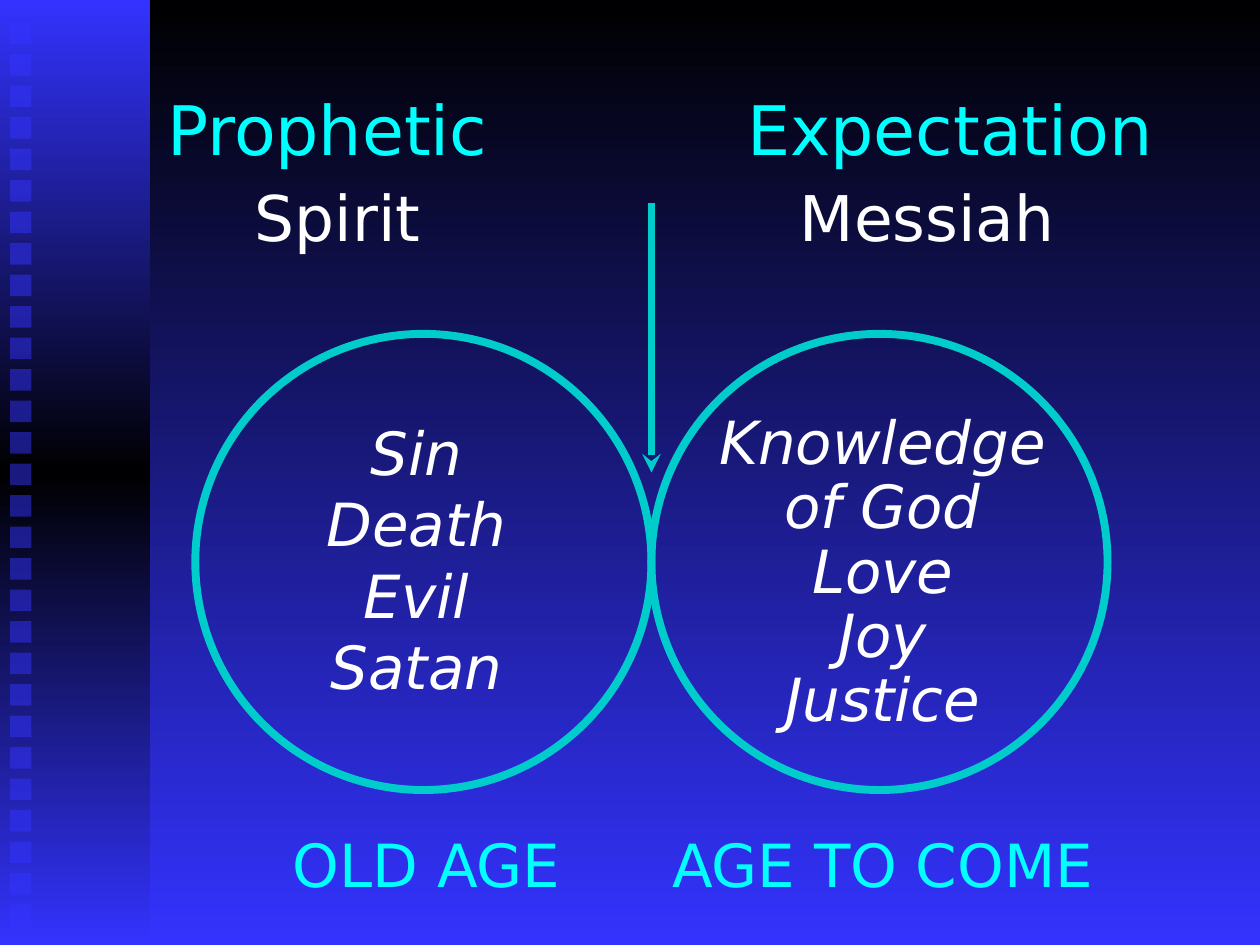
import pptx
import pptx.util
import pptx.dml.color
import pptx.enum.shapes
import pptx.enum.text
import pptx.oxml
import pptx.oxml.ns

Inches = pptx.util.Inches
Pt = pptx.util.Pt
qn = pptx.oxml.ns.qn
SHAPES = pptx.enum.shapes.MSO_SHAPE

COLORS = {
    "black": "000000",
    "blue": "3333FF",
    "teal": "00CCCC",
    "cyan": "00FFFF",
    "white": "FFFFFF",
}
FONT = "DejaVu Sans"
CIRCLE_SIZE = 3.62
CIRCLE_TOP = 2.65
CIRCLE_LEFT = 1.55
MEETING_X = CIRCLE_LEFT + CIRCLE_SIZE


def rgb(name):
    return pptx.dml.color.RGBColor.from_string(COLORS[name])


def add_xml(parent, tag, **attributes):
    child = parent.makeelement(qn(tag), attributes)
    parent.append(child)
    return child


def set_vertical_gradient(fill, element, names):
    """Spread the named colours evenly from top to bottom."""
    fill.gradient()
    fill.gradient_angle = 270
    stops = element.find(".//" + qn("a:gsLst"))
    for stop in list(stops):
        stops.remove(stop)
    for index, name in enumerate(names):
        position = 100000 * index // (len(names) - 1)
        stop = add_xml(stops, "a:gs", pos=str(position))
        add_xml(stop, "a:srgbClr", val=COLORS[name])


def place(shape, left, top, width, height):
    shape.left, shape.top = Inches(left), Inches(top)
    shape.width, shape.height = Inches(width), Inches(height)


def write_text(shape, lines, size=34, color="white", italic=False, spacing=1.0):
    frame = shape.text_frame
    frame.word_wrap = True
    frame.auto_size = pptx.enum.text.MSO_AUTO_SIZE.NONE
    frame.vertical_anchor = pptx.enum.text.MSO_ANCHOR.TOP
    frame.margin_left = frame.margin_right = 0
    frame.margin_top = frame.margin_bottom = 0
    for index, line in enumerate(lines):
        paragraph = frame.add_paragraph() if index else frame.paragraphs[0]
        paragraph.alignment = pptx.enum.text.PP_ALIGN.CENTER
        paragraph.line_spacing = spacing
        paragraph.space_before = Pt(0)
        properties = paragraph._p.get_or_add_pPr()
        properties.set("marL", "0")
        properties.set("indent", "0")
        add_xml(properties, "a:buNone")
        run = paragraph.add_run()
        run.text = line
        run.font.name = FONT
        run.font.size = Pt(size)
        run.font.bold = False
        run.font.italic = italic
        run.font.color.rgb = rgb(color)


def add_text(slide, text, left, top, width, height, **text_format):
    box = slide.shapes.add_textbox(0, 0, 0, 0)
    place(box, left, top, width, height)
    write_text(box, [text], **text_format)


def add_plain_shape(slide, kind, left, top, width, height):
    shape = slide.shapes.add_shape(
        kind, Inches(left), Inches(top), Inches(width), Inches(height))
    shape.shadow.inherit = False
    shape.line.fill.background()
    return shape


def add_side_band(slide):
    band = add_plain_shape(slide, SHAPES.RECTANGLE, 0, 0, 1.19, 7.5)
    set_vertical_gradient(band.fill, band._element, ["blue", "black", "blue"])
    for index in range(29):
        square = add_plain_shape(
            slide, SHAPES.RECTANGLE, 0.08, 0.18 + 0.25 * index, 0.17, 0.17)
        square.fill.solid()
        square.fill.fore_color.rgb = rgb("blue")
        color = square._element.spPr.find(".//" + qn("a:srgbClr"))
        add_xml(color, "a:alpha", val="50000")


def add_circle(slide, left):
    circle = add_plain_shape(
        slide, SHAPES.OVAL, left, CIRCLE_TOP, CIRCLE_SIZE, CIRCLE_SIZE)
    circle.fill.background()
    circle.line.color.rgb = rgb("teal")
    circle.line.width = Pt(4.5)


def add_down_arrow(slide, x, top, bottom):
    arrow = slide.shapes.add_connector(
        pptx.enum.shapes.MSO_CONNECTOR.STRAIGHT,
        Inches(x), Inches(top), Inches(x), Inches(bottom))
    arrow.line.color.rgb = rgb("teal")
    arrow.line.width = Pt(3.6)
    add_xml(arrow.line._get_or_add_ln(), "a:tailEnd",
            type="stealth", w="med", len="med")
    add_xml(arrow._element.spPr, "a:effectLst")


def main():
    presentation = pptx.Presentation()
    presentation.slide_width = Inches(10)
    presentation.slide_height = Inches(7.5)
    two_content = presentation.slide_layouts[3]
    slide = presentation.slides.add_slide(two_content)
    set_vertical_gradient(
        slide.background.fill, slide._element, ["black", "blue"])
    add_side_band(slide)

    title, old_list, new_list = slide.placeholders
    place(title, 1.1, 0.69, 3, 0.65)
    write_text(title, ["Prophetic"], size=39, color="cyan")
    add_text(slide, "Expectation", 5.74, 0.69, 3.6, 0.65,
             size=39, color="cyan")
    for label, left in (("Spirit", 1.18), ("Messiah", 5.86)):
        add_text(slide, label, left, 1.42, 3, 0.6, size=36)

    place(old_list, 1.69, 3.3, 3.23, 2.26)
    write_text(old_list, ["Sin", "Death", "Evil", "Satan"], italic=True)
    place(new_list, 5.39, 3.28, 3.23, 2.54)
    write_text(new_list, ["Knowledge", "of God", "Love", "Joy", "Justice"],
               italic=True, spacing=0.9)

    add_down_arrow(slide, MEETING_X, 1.61, 3.75)
    for left in (CIRCLE_LEFT, MEETING_X):
        add_circle(slide, left)
    for label, left in (("OLD AGE", 1.69), ("AGE TO COME", 5.31)):
        add_text(slide, label, left, 6.57, 3.39, 0.57, color="cyan")

    presentation.save("out.pptx")


if __name__ == "__main__":
    main()
